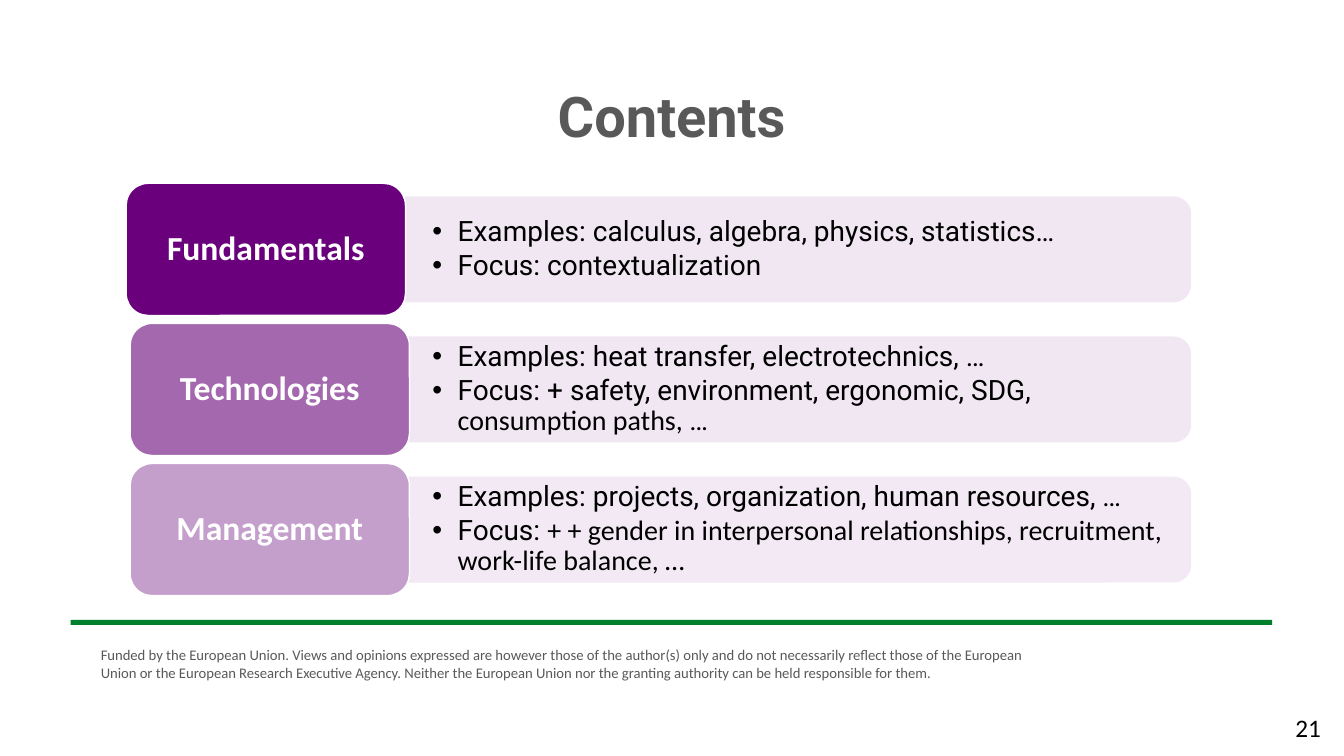
from lxml.etree import SubElement
from pptx import Presentation
from pptx.dml.color import RGBColor
from pptx.enum.shapes import MSO_SHAPE
from pptx.enum.text import MSO_ANCHOR, PP_ALIGN
from pptx.oxml.ns import qn
from pptx.util import Cm, Pt

COLORS = {
    "title": "595959", "rule": "007F2D", "panel": "F1E7F3", "text": "000000",
    "white": "FFFFFF", "fundamentals": "6A007C", "technologies": "A468AE",
    "management": "C59FCC",
}
FORMATS = {
    "title": {"name": "Roboto", "size": Pt(40), "bold": True},
    "label": {"name": "Calibri", "size": Pt(24), "bold": True},
    "roboto": {"name": "Roboto", "size": Pt(20)},
    "calibri": {"name": "Calibri", "size": Pt(20)},
    "footer": {"name": "Calibri", "size": Pt(10.5)},
    "number": {"name": "Calibri", "size": Pt(18)},
}
DISCLAIMER = (
    "Funded by the European Union. Views and opinions expressed are however those of "
    "the author(s) only and do not necessarily reflect those of the European Union or "
    "the European Research Executive Agency. Neither the European Union nor the granting "
    "authority can be held responsible for them."
)
# Label, colour, label left edge in cm, panel opacity in %, bullets made of (text, format) runs
ROWS = [
    ("Fundamentals", "fundamentals", 3.18, 100, [
        [("Examples: calculus, algebra, physics, statistics…", "roboto")],
        [("Focus: contextualization", "roboto")]]),
    ("Technologies", "technologies", 3.28, 100, [
        [("Examples: heat transfer, electrotechnics, …", "roboto")],
        [("Focus: + safety, environment, ergonomic, SDG,", "roboto"),
         (" consumption paths, ", "calibri"), ("…", "roboto")]]),
    ("Management", "management", 3.28, 90, [
        [("Examples: projects, organization, human resources, …", "roboto")],
        [("Focus: ", "roboto"),
         ("+ + gender in interpersonal relationships, recruitment, "
          "work-life balance, …", "calibri")]]),
]
ROW_TOP, ROW_PITCH, LABEL_W, LABEL_H = 4.62, 3.53, 7.04, 3.33
PANEL_LEFT, PANEL_W, PANEL_H = 10.21, 19.81, 2.67


def rgb(name):
    return RGBColor.from_string(COLORS[name])


def add_run(p, text, style, color):
    r = p.add_run()
    r.text = text
    for key, value in FORMATS[style].items():
        setattr(r.font, key, value)
    r.font.color.rgb = rgb(color)


def add_filled(s, shape, box, color):
    sp = s.shapes.add_shape(shape, *map(Cm, box))
    sp.shadow.inherit = False
    sp.fill.solid()
    sp.fill.fore_color.rgb = rgb(color)
    sp.line.fill.background()
    return sp


def add_frame(s, box):
    tf = s.shapes.add_textbox(*map(Cm, box)).text_frame
    tf.word_wrap = True
    return tf


def add_text(s, box, text, style, color, align=PP_ALIGN.LEFT):
    p = add_frame(s, box).paragraphs[0]
    p.alignment = align
    add_run(p, text, style, color)


def add_panel(s, left, top, width, height, opacity):
    """Draw a panel rounded at its right end: an upright shape turned by 90 degrees."""
    box = (left + (width - height) / 2, top + (height - width) / 2, height, width)
    sp = add_filled(s, MSO_SHAPE.ROUND_2_SAME_RECTANGLE, box, "panel")
    sp.rotation = 90
    if opacity < 100:
        clr = sp.fill._xPr.find(qn("a:solidFill"))[0]
        SubElement(clr, qn("a:alpha")).set("val", str(opacity * 1000))


def add_bullets(s, box, bullets):
    tf = add_frame(s, box)
    tf.vertical_anchor = MSO_ANCHOR.MIDDLE
    tf.margin_left = tf.margin_right = Cm(0.69)
    tf.margin_top = tf.margin_bottom = Cm(0.36)
    for i, runs in enumerate(bullets):
        p = tf.add_paragraph() if i else tf.paragraphs[0]
        p.line_spacing = 0.9
        p.space_after = Pt(3)
        pPr = p._p.get_or_add_pPr()
        pPr.set("marL", str(Cm(0.635)))
        pPr.set("indent", str(-Cm(0.635)))
        SubElement(pPr, qn("a:buFont")).set("typeface", "Arial")
        SubElement(pPr, qn("a:buChar")).set("char", "•")
        for text, style in runs:
            add_run(p, text, style, "text")


def add_label(s, box, text, color):
    sp = add_filled(s, MSO_SHAPE.ROUNDED_RECTANGLE, box, color)
    sp.line.color.rgb = rgb("white")
    sp.line.width = Pt(1)
    tf = sp.text_frame
    tf.vertical_anchor = MSO_ANCHOR.MIDDLE
    p = tf.paragraphs[0]
    p.alignment = PP_ALIGN.CENTER
    p.line_spacing = 0.9
    add_run(p, text, "label", "white")


def add_row(s, top, label, color, left, opacity, bullets):
    panel = (PANEL_LEFT, top + (LABEL_H - PANEL_H) / 2, PANEL_W, PANEL_H)
    add_panel(s, *panel, opacity)
    add_bullets(s, panel, bullets)
    add_label(s, (left, top, LABEL_W, LABEL_H), label, color)


def add_footer(s, left, top, width):
    add_filled(s, MSO_SHAPE.RECTANGLE, (left, top, width, 0.13), "rule")
    add_text(s, (left + 0.51, top + 0.53, 24.54, 1.09), DISCLAIMER, "footer", "title")
    add_text(s, (left + 30.5, top + 2.21, 1.37, 1.02), "21", "number", "text",
             PP_ALIGN.CENTER)


def main():
    prs = Presentation()
    prs.slide_width, prs.slide_height = Cm(33.87), Cm(19.05)
    s = prs.slides.add_slide(prs.slide_layouts[6])
    add_footer(s, 1.78, 15.62, 30.28)
    add_text(s, (9.42, 1.93, 15.01, 1.96), "Contents", "title", "title", PP_ALIGN.CENTER)
    for i, row in enumerate(ROWS):
        add_row(s, ROW_TOP + i * ROW_PITCH, *row)
    prs.save("out.pptx")


if __name__ == "__main__":
    main()
